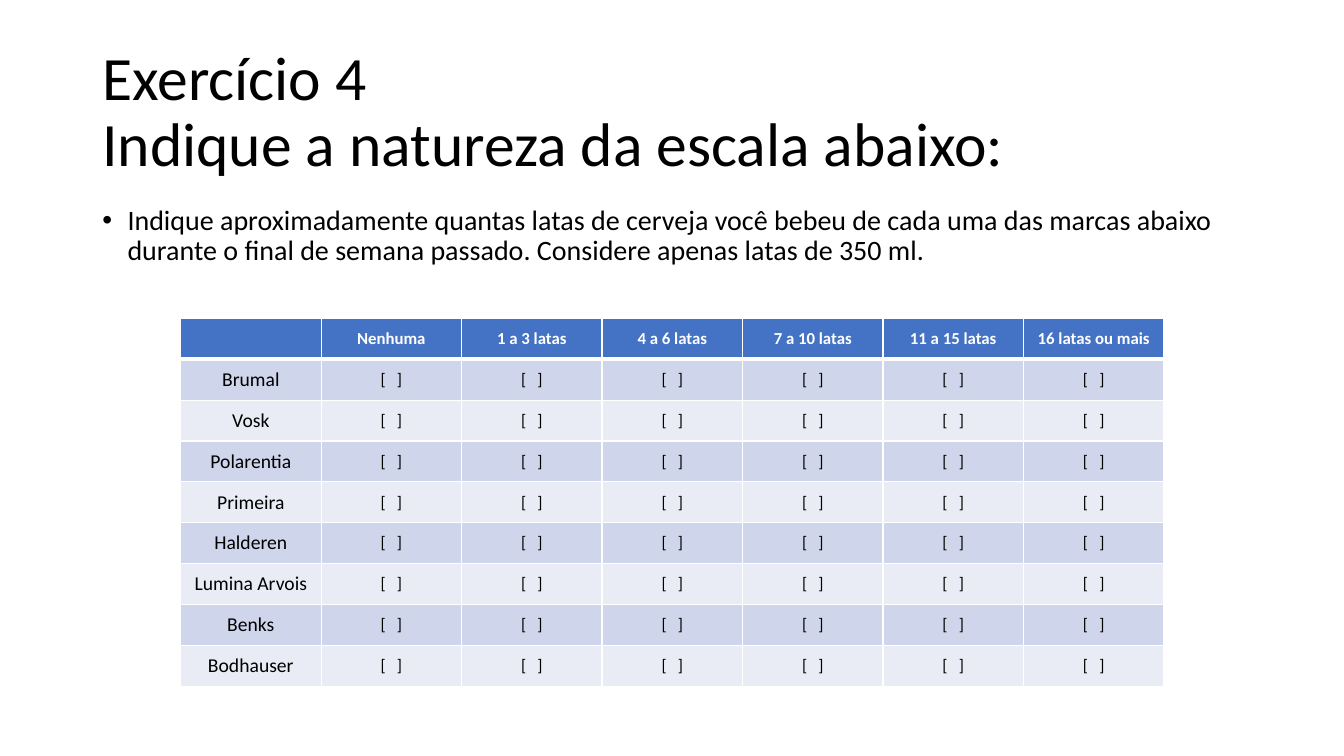
from lxml.etree import SubElement as Sub
from pptx import Presentation as Deck
from pptx.dml.color import RGBColor as Rgb
from pptx.enum.text import MSO_ANCHOR as Anchor, PP_ALIGN as Align
from pptx.oxml.ns import qn
from pptx.util import Inches, Pt

look = {
    "face": "Calibri", "ink": "000000", "paper": "FFFFFF",
    "head": "4472C4", "bands": ("CFD5EA", "E9EBF5"),
    "title": 44, "body": 20, "brand": 14, "small": 12,
    "thin": 1, "thick": 3,
}

deck = Deck()
deck.slide_width, deck.slide_height = Inches(13.333), Inches(7.5)
slide = deck.slides.add_slide(deck.slide_layouts[6])
col, row = deck.slide_width / 160, deck.slide_height / 90


def place(x, y, w, h):
    return int(x * col), int(y * row), int(w * col), int(h * row)


def style(para, size, ink, bold=False):
    font = para.font
    font.name, font.size, font.bold = look["face"], Pt(size), bold
    font.color.rgb = Rgb.from_string(ink)


title = slide.shapes.add_textbox(*place(11, 4.8, 138, 17.4)).text_frame
title.word_wrap = True
title.vertical_anchor = Anchor.MIDDLE
line = title.paragraphs[0]
line.text = "Exercício 4\vIndique a natureza da escala abaixo:"
line.line_spacing = 0.9
style(line, look["title"], look["ink"])

body = slide.shapes.add_textbox(*place(11, 24, 138, 57.1)).text_frame
body.word_wrap = True
ask = body.paragraphs[0]
ask.text = (
    "Indique aproximadamente quantas latas de cerveja você bebeu de cada uma "
    "das marcas abaixo durante o final de semana passado. "
    "Considere apenas latas de 350 ml."
)
ask.line_spacing = 0.9
props = ask._p.get_or_add_pPr()
props.set("marL", str(Inches(0.25)))
props.set("indent", str(-Inches(0.25)))
Sub(props, qn("a:buFont"), typeface="Arial")
Sub(props, qn("a:buChar"), char="•")
style(ask, look["body"], look["ink"])

heads = ["", "Nenhuma", "1 a 3 latas", "4 a 6 latas", "7 a 10 latas",
         "11 a 15 latas", "16 latas ou mais"]
brands = ["Brumal", "Vosk", "Polarentia", "Primeira", "Halderen",
          "Lumina Arvois", "Benks", "Bodhauser"]
grid = [heads] + [[name] + ["[ ]"] * (len(heads) - 1) for name in brands]

x, y, w, h = place(21.5, 37.9, 117.1, 43.8)
table = slide.shapes.add_table(len(grid), len(heads), x, y, w, h).table
for part in table.columns:
    part.width = w // len(heads)
for part in table.rows:
    part.height = h // len(grid)

for r, words in enumerate(grid):
    for c, word in enumerate(words):
        cell = table.cell(r, c)
        cell.vertical_anchor = Anchor.MIDDLE
        para = cell.text_frame.paragraphs[0]
        para.text = word
        para.alignment = Align.CENTER
        size = look["brand"] if r and not c else look["small"]
        style(para, size, look["ink"] if r else look["paper"], bold=not r)
        if r and c:
            para.font._element.set("spc", "270")

        edges = cell._tc.get_or_add_tcPr()
        for side in ("lnL", "lnR", "lnT", "lnB"):
            heavy = (r, side) in ((0, "lnB"), (1, "lnT"))
            width = look["thick" if heavy else "thin"]
            edge = Sub(edges, qn("a:" + side), w=str(Pt(width)))
            paint = Sub(edge, qn("a:solidFill"))
            Sub(paint, qn("a:srgbClr"), val=look["paper"])
        cell.fill.solid()
        shade = look["bands"][(r - 1) % 2] if r else look["head"]
        cell.fill.fore_color.rgb = Rgb.from_string(shade)

deck.save("out.pptx")
